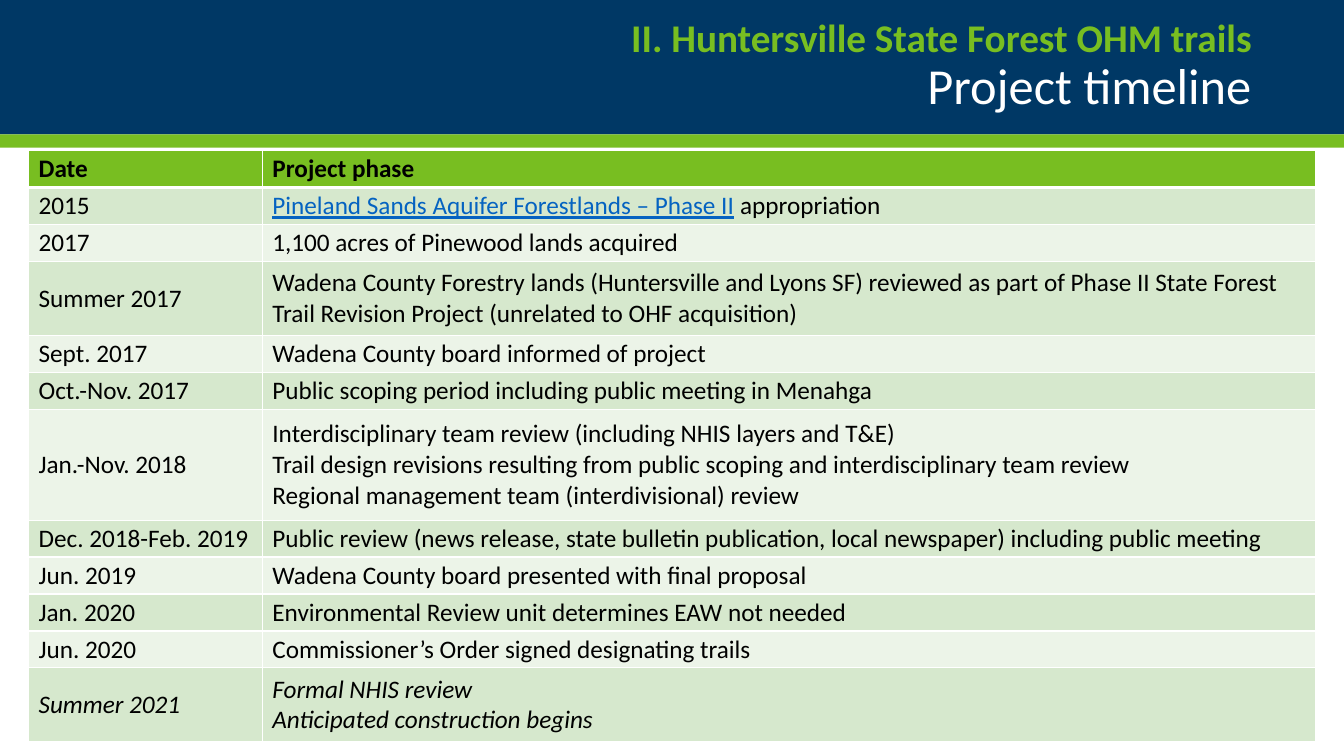
from lxml import etree
from pptx import Presentation
from pptx.dml.color import RGBColor
from pptx.enum.shapes import MSO_SHAPE
from pptx.enum.text import MSO_ANCHOR, MSO_AUTO_SIZE, PP_ALIGN
from pptx.oxml.ns import qn
from pptx.util import Pt

RECT = MSO_SHAPE.RECTANGLE
MIDDLE = MSO_ANCHOR.MIDDLE
RIGHT = PP_ALIGN.RIGHT
NO_FIT = MSO_AUTO_SIZE.NONE

FONT = "Calibri"
COLORS = {
    "navy": "003865", "green": "78BE21", "white": "FFFFFF", "black": "000000",
    "link": "0563C1", "odd": "D6E8CD", "even": "ECF4E8",
}
WIDTH, HEIGHT = 960, 540
COLS = (167, 752.4)
LINE = 26.4

PHASES = [
    ("Date", 1, ["Project phase"]),
    ("2015", 1, ["Pineland Sands Aquifer Forestlands – Phase II| appropriation"]),
    ("2017", 1, ["1,100 acres of Pinewood lands acquired"]),
    ("Summer 2017", 2, [
        "Wadena County Forestry lands (Huntersville and Lyons SF) reviewed as part "
        "of Phase II State Forest Trail Revision Project (unrelated to OHF acquisition)"]),
    ("Sept. 2017", 1, ["Wadena County board informed of project"]),
    ("Oct.-Nov. 2017", 1, ["Public scoping period including public meeting in Menahga"]),
    ("Jan.-Nov. 2018", 3, [
        "Interdisciplinary team review (including NHIS layers and T&E)",
        "Trail design revisions resulting from public scoping and interdisciplinary team review",
        "Regional management team (interdivisional) review"]),
    ("Dec. 2018-Feb. 2019", 1, [
        "Public review (news release, state bulletin publication, local newspaper) "
        "including public meeting"]),
    ("Jun. 2019", 1, ["Wadena County board presented with final proposal"]),
    ("Jan. 2020", 1, ["Environmental Review unit determines EAW not needed"]),
    ("Jun. 2020", 1, ["Commissioner’s Order signed designating trails"]),
    ("Summer 2021", 2, ["Formal NHIS review", "Anticipated construction begins"]),
]


def rgb(name):
    """Return the named colour."""
    return RGBColor.from_string(COLORS[name])


def add_run(para, text, size, color, bold=False, italic=False, under=False):
    """Append one formatted run to a paragraph."""
    run = para.add_run()
    run.text = text
    font = run.font
    font.name, font.size = FONT, Pt(size)
    font.bold, font.italic, font.underline = bold, italic, under
    font.color.rgb = rgb(color)


def add_bar(slide, top, height, color):
    """Add a full-width band."""
    bar = slide.shapes.add_shape(RECT, 0, Pt(top), Pt(WIDTH), Pt(height))
    bar.shadow.inherit = False
    bar.fill.solid()
    bar.fill.fore_color.rgb = rgb(color)
    bar.line.fill.background()


def set_title(slide):
    """Place the two-line title in front of the bands."""
    title = slide.shapes.title
    title.element.getparent().append(title.element)
    title.left, title.top = Pt(66), Pt(0)
    title.width, title.height = Pt(828), Pt(96)
    frame = title.text_frame
    frame.auto_size, frame.word_wrap = NO_FIT, True
    frame.vertical_anchor = MIDDLE
    frame.margin_left = frame.margin_right = 0
    frame.margin_top = frame.margin_bottom = Pt(3.6)
    para = frame.paragraphs[0]
    para.alignment, para.line_spacing = RIGHT, 0.9
    add_run(para, "II. Huntersville State Forest OHM trails", 28, "green", bold=True)
    para.add_line_break()
    etree.SubElement(para.runs[0].font._element.getparent().getnext(),
                     qn("a:rPr"), sz="2800")
    add_run(para, "Project timeline", 36, "white")


def set_edges(cell, base):
    """Draw white borders, the bottom one with its own width."""
    props = cell._tc.get_or_add_tcPr()
    widths = (("L", 1), ("R", 1), ("T", 1), ("B", base))
    for spot, (side, width) in enumerate(widths):
        edge = etree.Element(qn("a:ln" + side), w=str(Pt(width)))
        fill = etree.SubElement(edge, qn("a:solidFill"))
        etree.SubElement(fill, qn("a:srgbClr"), val=COLORS["white"])
        props.insert(spot, edge)


def fill_cell(cell, lines, fill, base, bold, italic):
    """Write lines into a cell; text before a bar looks like a link."""
    cell.vertical_anchor = MIDDLE
    cell.margin_left = cell.margin_right = Pt(7.2)
    cell.margin_top = cell.margin_bottom = 0
    cell.fill.solid()
    cell.fill.fore_color.rgb = rgb(fill)
    set_edges(cell, base)
    frame = cell.text_frame
    for num, line in enumerate(lines):
        para = frame.add_paragraph() if num else frame.paragraphs[0]
        link, mark, rest = line.rpartition("|")
        if mark:
            add_run(para, link, 18, "link", under=True)
        add_run(para, rest, 18, "black", bold, italic)


def add_phases(slide):
    """Add the timeline table."""
    total = LINE * sum(count for _, count, _ in PHASES)
    table = slide.shapes.add_table(len(PHASES), len(COLS), Pt(20.4), Pt(107.6),
                                   Pt(sum(COLS)), Pt(total)).table
    for col, width in zip(table.columns, COLS):
        col.width = Pt(width)
    for num, (date, count, lines) in enumerate(PHASES):
        table.rows[num].height = Pt(LINE * count)
        head, last = num == 0, num == len(PHASES) - 1
        fill = "green" if head else "odd" if num % 2 else "even"
        for col, text in enumerate(([date], lines)):
            fill_cell(table.cell(num, col), text, fill, 3 if head else 1, head, last)


def main():
    """Build and save the slide."""
    deck = Presentation()
    deck.slide_width, deck.slide_height = Pt(WIDTH), Pt(HEIGHT)
    slide = deck.slides.add_slide(deck.slide_layouts[5])
    add_bar(slide, 0, 96, "navy")
    add_bar(slide, 96, 9.4, "green")
    set_title(slide)
    add_phases(slide)
    deck.save("out.pptx")


if __name__ == "__main__":
    main()
